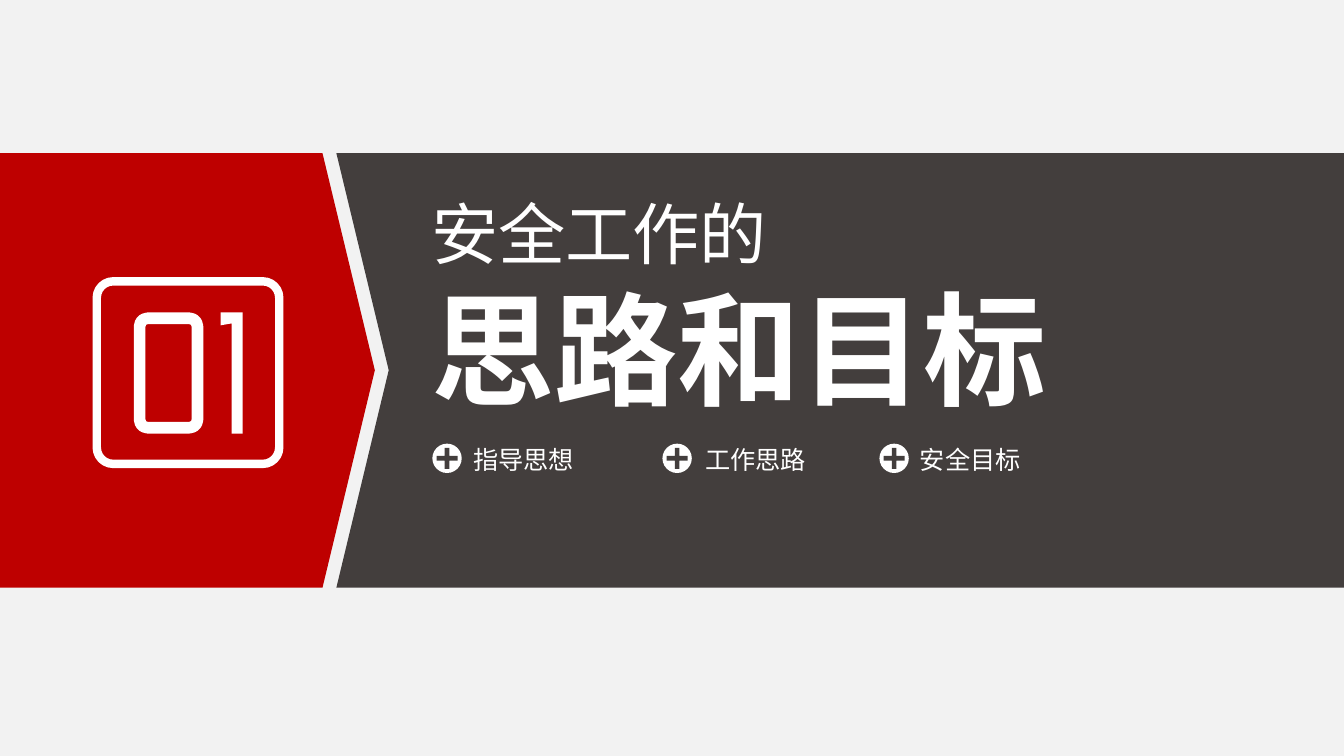
from dataclasses import dataclass

from lxml import etree
from pptx import Presentation
from pptx import util as u
from pptx.dml.color import RGBColor
from pptx.enum import shapes, text
from pptx.oxml.ns import qn

FONT = "Noto Sans CJK SC"
RED, DARK, WHITE, PALE = "BE0000", "433E3D", "FFFFFF", "F2F2F2"
PAGE_WIDTH, PAGE_HEIGHT = 33.88, 19.05
BAND_TOP, BAND_MIDDLE, BAND_BOTTOM = 3.86, 9.33, 14.81
ICON_TOP, ICON_SIZE, PLUS_SIZE = 11.18, 0.74, 0.53


@dataclass
class Topic:
    label: str
    icon_left: float
    label_left: float


TOPICS = [
    Topic("指导思想", 10.9, 11.68),
    Topic("工作思路", 16.7, 17.53),
    Topic("安全目标", 22.17, 22.94),
]


def colour(value: str) -> RGBColor:
    return RGBColor.from_string(value)


def paint(shape, fill: str) -> None:
    shape.shadow.inherit = False
    shape.fill.solid()
    shape.fill.fore_color.rgb = colour(fill)
    shape.line.fill.background()


def add_polygon(page, points: list[tuple[float, float]], fill: str) -> None:
    start, *others = [(u.Cm(x), u.Cm(y)) for x, y in points]
    builder = page.shapes.build_freeform(*start)
    builder.add_line_segments(others, close=True)
    paint(builder.convert_to_shape(), fill)


def add_preset(page, kind, left: float, top: float, width: float, height: float):
    return page.shapes.add_shape(kind, u.Cm(left), u.Cm(top), u.Cm(width), u.Cm(height))


def add_outline(page, left: float, top: float, width: float, height: float,
                corner: float, weight: float) -> None:
    """Draw an unfilled white rounded rectangle."""
    outline = add_preset(page, shapes.MSO_SHAPE.ROUNDED_RECTANGLE, left, top, width, height)
    outline.adjustments[0] = corner
    outline.shadow.inherit = False
    outline.fill.background()
    outline.line.color.rgb = colour(WHITE)
    outline.line.width = u.Pt(weight)


def style_paragraph(para, size: float, bold: bool = False) -> None:
    para.alignment = text.PP_ALIGN.LEFT
    para.font.name = FONT
    para.font.size = u.Pt(size)
    para.font.bold = bold
    para.font.color.rgb = colour(WHITE)
    for span in para.runs:
        properties = span._r.get_or_add_rPr()
        etree.SubElement(properties, qn("a:ea"), typeface=FONT)


def add_title(page) -> None:
    title = page.shapes.title
    title.left, title.top = u.Cm(10.87), u.Cm(4.85)
    title.width, title.height = u.Cm(20.07), u.Cm(5.82)
    frame = title.text_frame
    frame.margin_left = frame.margin_top = frame.margin_right = frame.margin_bottom = 0
    frame.vertical_anchor = text.MSO_ANCHOR.TOP
    frame.auto_size = text.MSO_AUTO_SIZE.NONE
    frame.word_wrap = True
    frame.text = "安全工作的\n思路和目标"
    style_paragraph(frame.paragraphs[0], 48)
    style_paragraph(frame.paragraphs[1], 88, bold=True)


def add_topic(page, topic: Topic) -> None:
    disc = add_preset(page, shapes.MSO_SHAPE.OVAL, topic.icon_left, ICON_TOP, ICON_SIZE, ICON_SIZE)
    paint(disc, WHITE)
    inset = (ICON_SIZE - PLUS_SIZE) / 2
    plus = add_preset(page, shapes.MSO_SHAPE.CROSS, topic.icon_left + inset, ICON_TOP + inset,
                      PLUS_SIZE, PLUS_SIZE)
    plus.adjustments[0] = 0.39
    paint(plus, DARK)
    box = page.shapes.add_textbox(u.Cm(topic.label_left), u.Cm(11.07), u.Cm(3.8), u.Cm(1.02))
    box.text_frame.word_wrap = True
    box.text_frame.text = topic.label
    style_paragraph(box.text_frame.paragraphs[0], 18)


def add_number(page) -> None:
    """Draw the framed section number 01."""
    add_outline(page, 2.44, 7.09, 4.6, 4.6, corner=0.09, weight=6)
    add_outline(page, 3.52, 8.02, 1.46, 2.76, corner=0.14, weight=8.3)
    add_polygon(page, [(5.84, 10.93), (6.12, 10.93), (6.12, 7.87), (5.56, 7.87),
                       (5.56, 8.2), (5.84, 8.15)], WHITE)


def main() -> None:
    deck = Presentation()
    deck.slide_width, deck.slide_height = u.Cm(PAGE_WIDTH), u.Cm(PAGE_HEIGHT)
    page = deck.slides.add_slide(deck.slide_layouts[5])
    page.background.fill.solid()
    page.background.fill.fore_color.rgb = colour(PALE)

    add_polygon(page, [(0, BAND_TOP), (8.13, BAND_TOP), (9.45, BAND_MIDDLE),
                       (8.13, BAND_BOTTOM), (0, BAND_BOTTOM)], RED)
    add_polygon(page, [(8.48, BAND_TOP), (PAGE_WIDTH, BAND_TOP), (PAGE_WIDTH, BAND_BOTTOM),
                       (8.48, BAND_BOTTOM), (9.8, BAND_MIDDLE)], DARK)
    add_number(page)
    # The title placeholder comes first in the tree; move it in front of the bands.
    page.shapes.title._element.getparent().append(page.shapes.title._element)
    add_title(page)
    for topic in TOPICS:
        add_topic(page, topic)
    deck.save("out.pptx")


if __name__ == "__main__":
    main()
